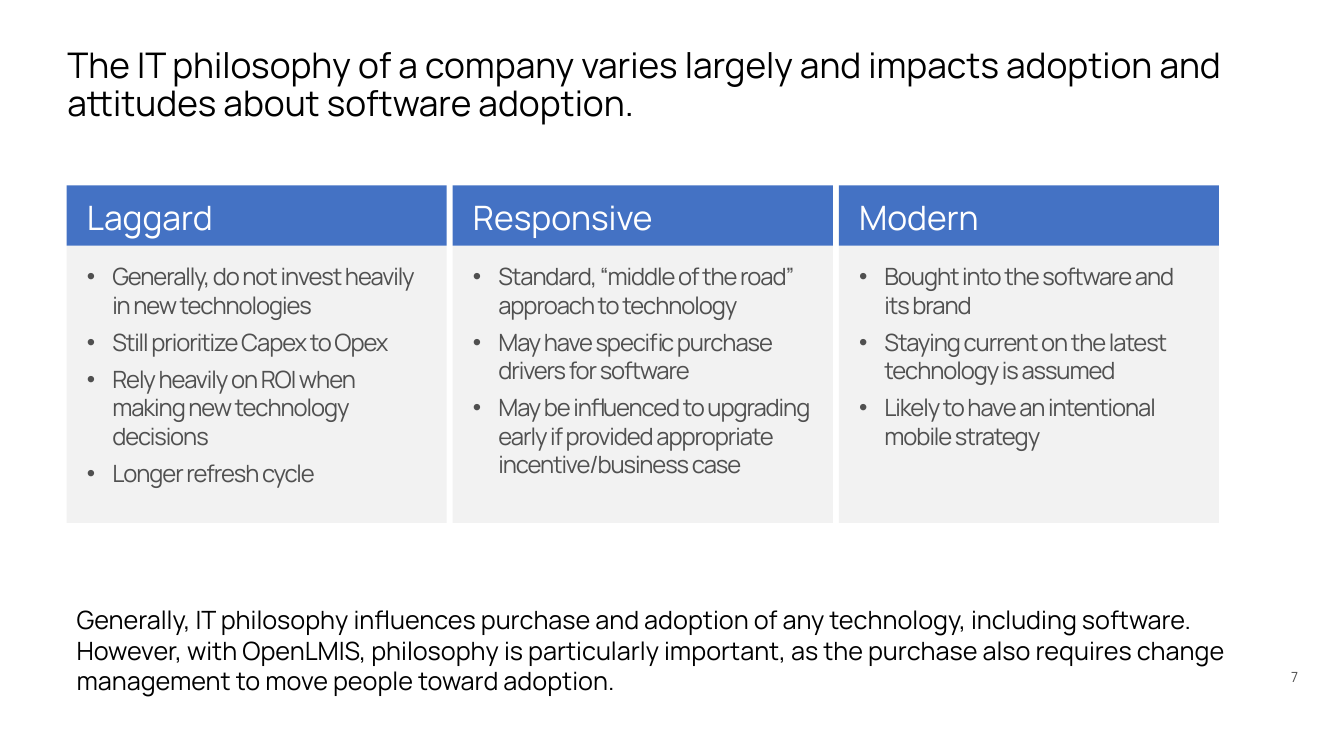
from dataclasses import dataclass

from lxml.etree import SubElement
from pptx import Presentation
from pptx.dml.color import RGBColor
from pptx.enum.shapes import MSO_SHAPE
from pptx.enum.text import MSO_ANCHOR, PP_ALIGN
from pptx.oxml.ns import qn
from pptx.util import Cm, Pt


@dataclass(frozen=True)
class Theme:
    font: str = "Manrope"
    ink: RGBColor = RGBColor(0x00, 0x00, 0x00)
    muted: RGBColor = RGBColor(0x50, 0x50, 0x50)
    header_text: RGBColor = RGBColor(0xFF, 0xFF, 0xFF)
    header_fill: RGBColor = RGBColor(0x44, 0x72, 0xC4)
    body_fill: RGBColor = RGBColor(0xF2, 0xF2, 0xF2)
    title_size: float = 25.2
    header_size: float = 24
    body_size: float = 17
    note_size: float = 18
    number_size: float = 10


THEME = Theme()

PHILOSOPHIES = [
    ("Laggard", [
        "Generally, do not invest heavily in new technologies",
        "Still prioritize Capex to Opex",
        "Rely heavily on ROI when making new technology decisions",
        "Longer refresh cycle",
    ]),
    ("Responsive", [
        "Standard, “middle of the road” approach to technology",
        "May have specific purchase drivers for software",
        "May be influenced to upgrading early if provided appropriate "
        "incentive/business case",
    ]),
    ("Modern", [
        "Bought into the software and its brand",
        "Staying current on the latest technology is assumed",
        "Likely to have an intentional mobile strategy",
    ]),
]


def set_frame(frame, inset_x, inset_y, anchor):
    frame.word_wrap = True
    frame.vertical_anchor = anchor
    frame.margin_left = frame.margin_right = Cm(inset_x)
    frame.margin_top = frame.margin_bottom = Cm(inset_y)


def add_run(paragraph, wording, size, color):
    run = paragraph.add_run()
    run.text = wording
    run.font.name = THEME.font
    run.font.size = Pt(size)
    run.font.color.rgb = color
    return run


def add_text(slide, box, wording, size, color, inset=(0.25, 0.13),
             anchor=MSO_ANCHOR.TOP, line_spacing=None):
    frame = slide.shapes.add_textbox(*map(Cm, box)).text_frame
    set_frame(frame, *inset, anchor)
    paragraph = frame.paragraphs[0]
    paragraph.line_spacing = line_spacing
    add_run(paragraph, wording, size, color)


def add_panel(slide, box, fill):
    panel = slide.shapes.add_shape(MSO_SHAPE.RECTANGLE, *map(Cm, box))
    panel.shadow.inherit = False
    panel.fill.solid()
    panel.fill.fore_color.rgb = fill
    panel.line.fill.background()
    set_frame(panel.text_frame, 0.51, 0.41, MSO_ANCHOR.TOP)
    return panel.text_frame


def add_bullet(paragraph, wording):
    properties = paragraph._p.get_or_add_pPr()
    properties.set("marL", str(Cm(0.64)))
    properties.set("indent", str(-Cm(0.64)))
    SubElement(properties, qn("a:buFont"), typeface="Arial")
    SubElement(properties, qn("a:buChar"), char="•")
    paragraph.alignment = PP_ALIGN.LEFT
    paragraph.space_after = Pt(6)
    run = add_run(paragraph, wording, THEME.body_size, THEME.muted)
    run.font._element.set("spc", "-80")


def add_philosophy(slide, box, heading, traits):
    left, top, width, height = box
    header_height = 1.52
    body = add_panel(slide, (left, top + header_height, width, height - header_height),
                     THEME.body_fill)
    for index, trait in enumerate(traits):
        add_bullet(body.add_paragraph() if index else body.paragraphs[0], trait)
    header = add_panel(slide, (left, top, width, header_height), THEME.header_fill)
    title = header.paragraphs[0]
    title.alignment = PP_ALIGN.LEFT
    title.line_spacing = 0.9
    add_run(title, heading, THEME.header_size, THEME.header_text)


def add_philosophies(slide, box):
    left, top, width, height = box
    gap = 0.15
    column_width = (width - gap * (len(PHILOSOPHIES) - 1)) / len(PHILOSOPHIES)
    for index, (heading, traits) in enumerate(PHILOSOPHIES):
        column_left = left + index * (column_width + gap)
        add_philosophy(slide, (column_left, top, column_width, height), heading, traits)


def main():
    deck = Presentation()
    deck.slide_width, deck.slide_height = Cm(33.87), Cm(19.05)
    slide = deck.slides.add_slide(deck.slide_layouts[6])
    add_philosophies(slide, (1.68, 4.67, 29.04, 8.51))
    add_text(slide, (1.45, 1.14, 30.99, 2.08),
             "The IT philosophy of a company varies largely and impacts adoption "
             "and attitudes about software adoption.",
             THEME.title_size, THEME.ink, anchor=MSO_ANCHOR.MIDDLE, line_spacing=0.9)
    add_text(slide, (32.21, 16.76, 1.55, 0.61), "7", THEME.number_size, THEME.muted,
             inset=(0.33, 0.18), anchor=MSO_ANCHOR.MIDDLE)
    add_text(slide, (1.68, 15.11, 30.1, 2.57),
             "Generally, IT philosophy influences purchase and adoption of any "
             "technology, including software. However, with OpenLMIS, philosophy is "
             "particularly important, as the purchase also requires change management "
             "to move people toward adoption.",
             THEME.note_size, THEME.ink)
    deck.save("out.pptx")


if __name__ == "__main__":
    main()
